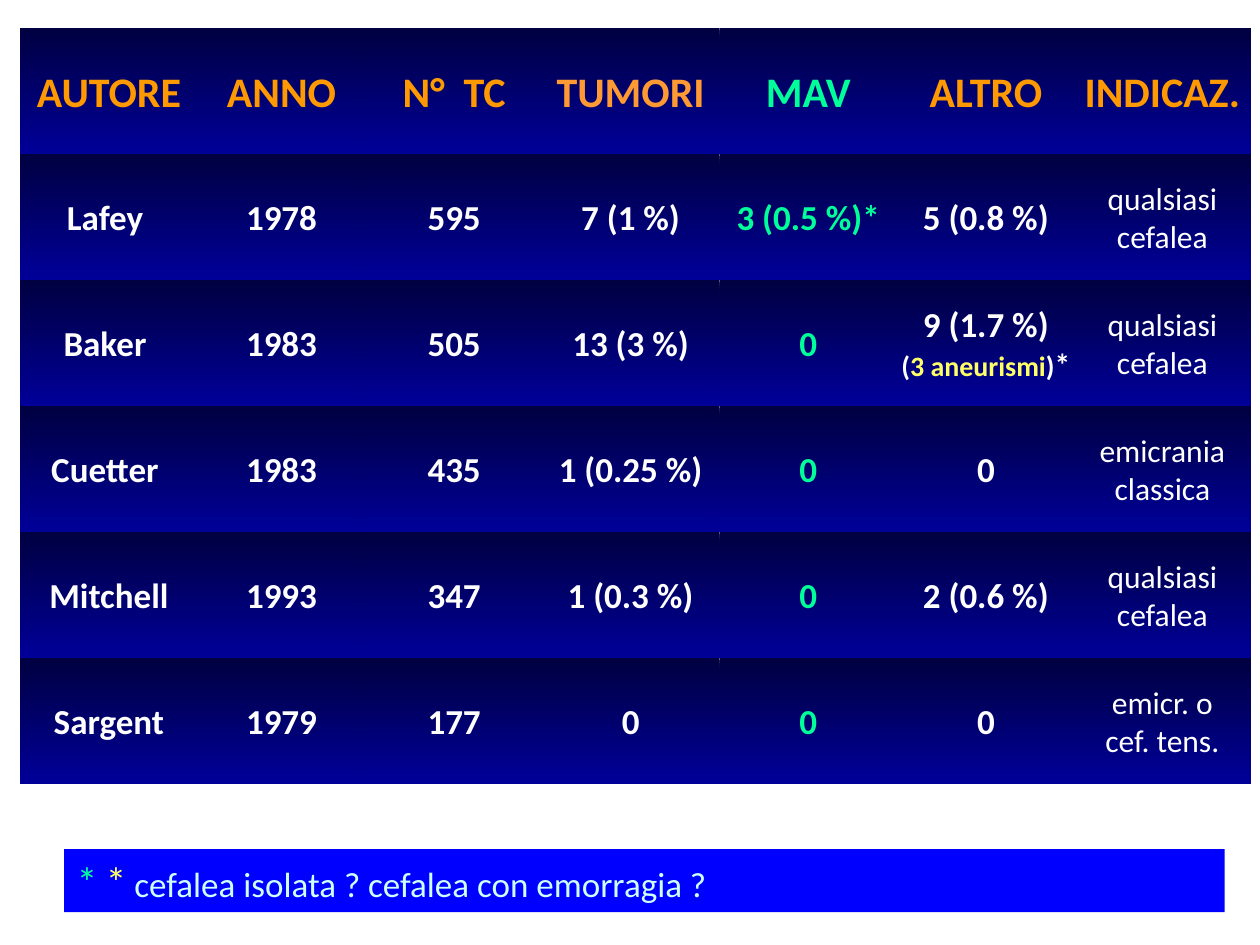
from pptx import Presentation
from pptx.dml.color import RGBColor
from pptx.enum.shapes import MSO_SHAPE
from pptx.enum.text import MSO_ANCHOR, MSO_AUTO_SIZE, PP_ALIGN
from pptx.util import Inches, Pt

RECT = MSO_SHAPE.RECTANGLE
MIDDLE, TOP = MSO_ANCHOR.MIDDLE, MSO_ANCHOR.TOP
GROW = MSO_AUTO_SIZE.SHAPE_TO_FIT_TEXT
LEFT, CENTER = PP_ALIGN.LEFT, PP_ALIGN.CENTER

WHITE = RGBColor(0xFF, 0xFF, 0xFF)
ORANGE = RGBColor(0xFF, 0x99, 0x00)
LIGHT_ORANGE = RGBColor(0xFF, 0x99, 0x33)
GREEN = RGBColor(0x00, 0xFF, 0x99)
YELLOW = RGBColor(0xFF, 0xFF, 0x66)
PALE_CYAN = RGBColor(0xCC, 0xFF, 0xFF)
BLUE = RGBColor(0x00, 0x00, 0xFF)
CELL_TOP = RGBColor(0x00, 0x00, 0x40)
CELL_BOTTOM = RGBColor(0x00, 0x00, 0x99)

HEADERS = ["AUTORE", "ANNO", "N°  TC", "TUMORI", "MAV", "ALTRO", "INDICAZ."]
HEADER_COLORS = {"TUMORI": LIGHT_ORANGE, "MAV": GREEN}
MAV_COL, INDICATION_COL = HEADERS.index("MAV"), HEADERS.index("INDICAZ.")
STUDIES = [
    ["Lafey ", "1978", "595", "7 (1 %)", "3 (0.5 %)*", "5 (0.8 %)", "qualsiasi\ncefalea"],
    ["Baker ", "1983", "505", "13 (3 %)", "0", "9 (1.7 %)\n", "qualsiasi\ncefalea"],
    ["Cuetter ", "1983", "435", "1 (0.25 %)", "0", "0", "emicrania\nclassica"],
    ["Mitchell", "1993", "347", "1 (0.3 %)", "0", "2 (0.6 %)", "qualsiasi\ncefalea"],
    ["Sargent", "1979", "177", "0", "0", "0", "emicr. o\ncef. tens."],
]
ANEURYSM_REMARK = [("(", 16, WHITE), ("3 aneurismi", 16, YELLOW),
                   (")", 16, WHITE), ("*", 18, WHITE)]
FOOTNOTE = [("*", 24, GREEN), (" ", 20, GREEN), ("*", 24, YELLOW), (" ", 20, GREEN),
            ("cefalea isolata ? cefalea con emorragia ?", 20, PALE_CYAN)]
COL_LEFTS = [0.16, 1.53, 2.9, 4.3, 5.71, 7.12, 8.52]
CELL_WIDTH, CELL_HEIGHT, TABLE_TOP = 1.41, 1, 0.22


def add_text(p, text, size=20, color=WHITE, bold=False, align=CENTER):
    """Append text to paragraph p, turning each newline into a line break."""
    p.alignment = align
    for i, line in enumerate(text.split("\n")):
        if i:
            p.add_line_break()
        if line:
            r = p.add_run()
            r.text = line
            r.font.name = "Calibri"
            r.font.size = Pt(size)
            r.font.bold = bold
            r.font.color.rgb = color


def add_box(shapes, left, top, width, height, anchor=MIDDLE, wrap=False):
    sp = shapes.add_shape(RECT, Inches(left), Inches(top), Inches(width), Inches(height))
    sp.shadow.inherit = False
    sp.line.fill.background()
    sp.text_frame.vertical_anchor = anchor
    sp.text_frame.word_wrap = wrap
    return sp


prs = Presentation()
prs.slide_width, prs.slide_height = Inches(10), Inches(7.5)
s = prs.slides.add_slide(prs.slide_layouts[6])

# Grid of studies
grid = s.shapes.add_group_shape()
for i, row in enumerate([HEADERS] + STUDIES):
    for j, (left, text) in enumerate(zip(COL_LEFTS, row)):
        cell = add_box(grid.shapes, left, TABLE_TOP + i * CELL_HEIGHT, CELL_WIDTH, CELL_HEIGHT)
        cell.fill.gradient()
        cell.fill.gradient_angle = 270
        for stop, color in zip(cell.fill.gradient_stops, (CELL_TOP, CELL_BOTTOM)):
            stop.color.rgb = color
        p = cell.text_frame.paragraphs[0]
        if i == 0:
            add_text(p, text, size=24, color=HEADER_COLORS.get(text, ORANGE), bold=True)
        elif j == INDICATION_COL:
            add_text(p, text, size=18)
        else:
            add_text(p, text, color=GREEN if j == MAV_COL else WHITE, bold=True)
        if text.endswith("\n"):
            for part, size, color in ANEURYSM_REMARK:
                add_text(p, part, size=size, color=color, bold=True)

# Footnote
note = add_box(s.shapes, 0.51, 6.74, 9.21, 0.5, anchor=TOP, wrap=True)
note.fill.solid()
note.fill.fore_color.rgb = BLUE
note.text_frame.auto_size = GROW
for part, size, color in FOOTNOTE:
    add_text(note.text_frame.paragraphs[0], part, size=size, color=color, align=LEFT)

prs.save("out.pptx")
